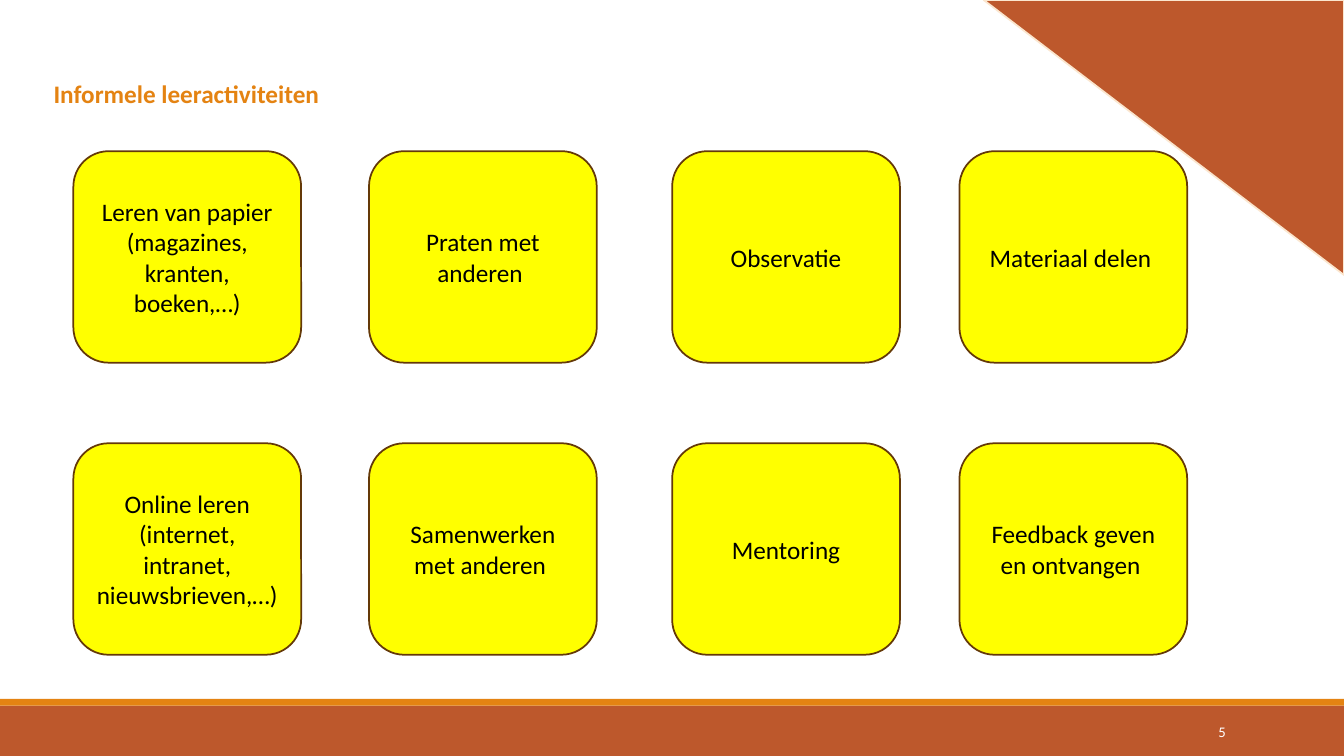
import pptx
import pptx.util
import pptx.dml.color
import pptx.enum.shapes
import pptx.enum.text

Cm, Pt = pptx.util.Cm, pptx.util.Pt
SHAPE = pptx.enum.shapes.MSO_SHAPE
ALIGN = pptx.enum.text.PP_ALIGN
ANCHOR = pptx.enum.text.MSO_ANCHOR

TITLE = "Informele leeractiviteiten"
PAGE_NUMBER = "5"
ACTIVITIES = [
    ["Leren van papier (magazines, kranten, boeken,…)", "Praten met anderen ",
     "Observatie", "Materiaal delen "],
    ["Online leren (internet, intranet, nieuwsbrieven,…)", "Samenwerken met anderen ",
     "Mentoring", "Feedback geven en ontvangen "],
]

RUST, ORANGE, CREAM = "BD582C", "E48312", "FBE6CE"
YELLOW, BROWN, BLACK, WHITE = "FFFF00", "643908", "000000", "FFFFFF"

SLIDE_WIDTH, SLIDE_HEIGHT = 33.87, 19.05
FOOTER_TOP, STRIPE_HEIGHT = 17.78, 0.17
CARD_LEFTS = [1.85, 9.3, 16.94, 24.18]
CARD_TOPS = [3.81, 11.17]
CARD_WIDTH, CARD_HEIGHT = 5.74, 5.33


def rgb(hex_color):
    return pptx.dml.color.RGBColor.from_string(hex_color)


def add_block(kind, left, top, width, height, fill, line=None):
    block = slide.shapes.add_shape(kind, Cm(left), Cm(top), Cm(width), Cm(height))
    block.shadow.inherit = False
    block.fill.solid()
    block.fill.fore_color.rgb = rgb(fill)
    if line:
        block.line.color.rgb = rgb(line)
        block.line.width = Pt(1.25)
    else:
        block.line.fill.background()
    return block


def write(holder, text, size=18, color=BLACK, bold=False, align=ALIGN.LEFT,
          anchor=ANCHOR.TOP, wrap=True):
    frame = holder.text_frame
    frame.word_wrap = wrap
    frame.vertical_anchor = anchor
    paragraph = frame.paragraphs[0]
    paragraph.alignment = align
    run = paragraph.add_run()
    run.text = text
    run.font.name = "Calibri"
    run.font.size = Pt(size)
    run.font.bold = bold
    run.font.color.rgb = rgb(color)


deck = pptx.Presentation()
deck.slide_width, deck.slide_height = Cm(SLIDE_WIDTH), Cm(SLIDE_HEIGHT)
slide = deck.slides.add_slide(deck.slide_layouts[6])

add_block(SHAPE.RECTANGLE, 0, FOOTER_TOP, SLIDE_WIDTH, SLIDE_HEIGHT - FOOTER_TOP, RUST)
add_block(SHAPE.RECTANGLE, 0, FOOTER_TOP - STRIPE_HEIGHT, SLIDE_WIDTH, STRIPE_HEIGHT, ORANGE)

title = slide.shapes.add_textbox(Cm(1.1), Cm(1.86), Cm(7.26), Cm(1.03))
write(title, TITLE, color=ORANGE, bold=True, wrap=False)
title.text_frame.auto_size = pptx.enum.text.MSO_AUTO_SIZE.SHAPE_TO_FIT_TEXT

corner = add_block(SHAPE.RIGHT_TRIANGLE, 24.79, 0, 9.08, 6.93, RUST, line=CREAM)
corner.rotation = 180

page_number = slide.shapes.add_textbox(Cm(27.5), Cm(17.94), Cm(3.64), Cm(1.01))
write(page_number, PAGE_NUMBER, size=10.5, color=WHITE, align=ALIGN.RIGHT,
      anchor=ANCHOR.MIDDLE)

for top, activity_row in zip(CARD_TOPS, ACTIVITIES):
    for left, activity in zip(CARD_LEFTS, activity_row):
        card = add_block(SHAPE.ROUNDED_RECTANGLE, left, top, CARD_WIDTH, CARD_HEIGHT,
                         YELLOW, line=BROWN)
        write(card, activity, align=ALIGN.CENTER, anchor=ANCHOR.MIDDLE)

deck.save("out.pptx")
